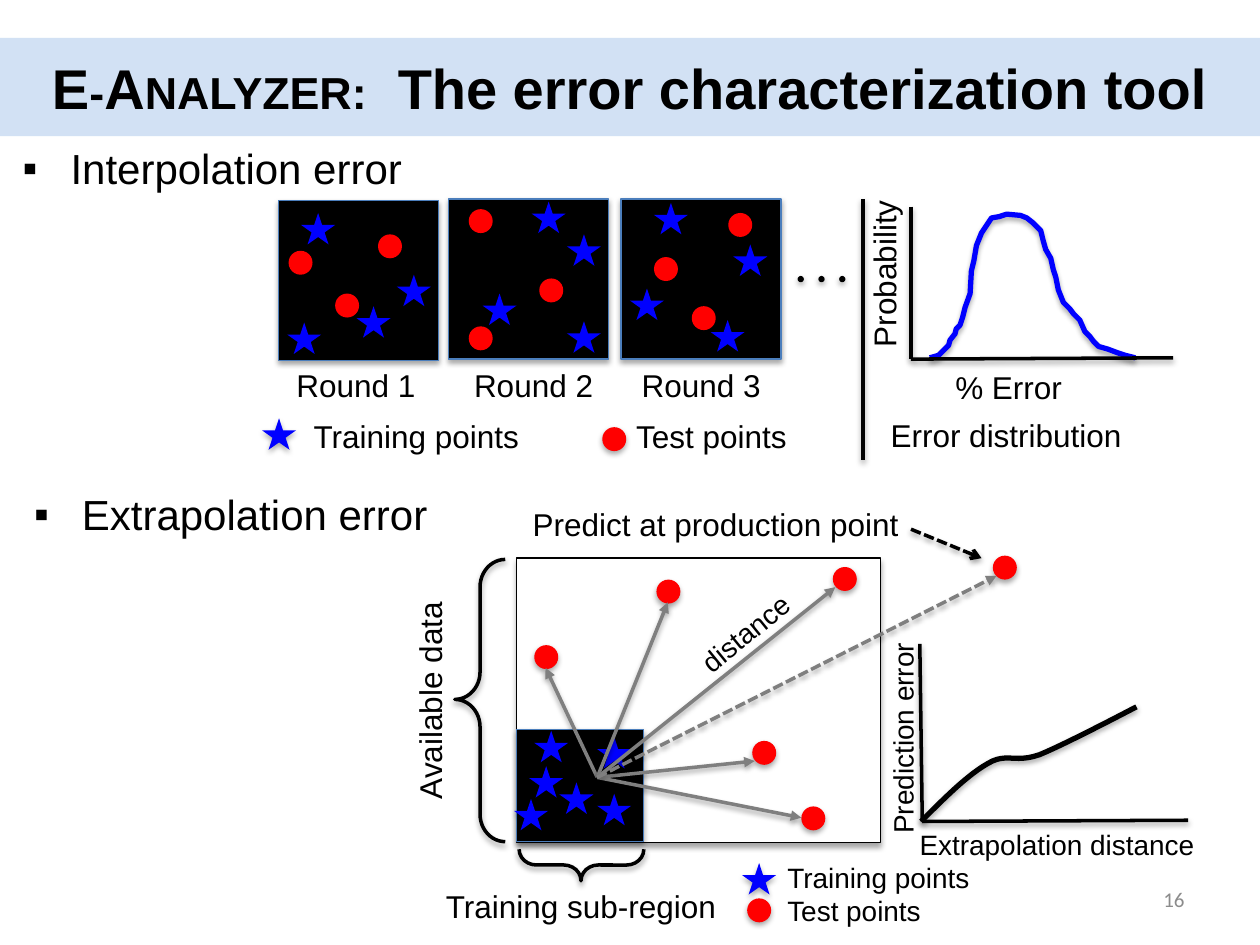
from typing import NamedTuple

from lxml import etree
from pptx import Presentation
from pptx.dml.color import RGBColor
from pptx.enum.dml import MSO_LINE
from pptx.enum.shapes import MSO_CONNECTOR, MSO_SHAPE
from pptx.enum.text import MSO_ANCHOR, MSO_AUTO_SIZE, PP_ALIGN
from pptx.oxml.ns import qn
from pptx.util import Inches, Pt

RECT, OVAL, STAR = MSO_SHAPE.RECTANGLE, MSO_SHAPE.OVAL, MSO_SHAPE.STAR_5_POINT
BRACE, STRAIGHT = MSO_SHAPE.RIGHT_BRACE, MSO_CONNECTOR.STRAIGHT
LEFT, CENTER, RIGHT = PP_ALIGN.LEFT, PP_ALIGN.CENTER, PP_ALIGN.RIGHT
TOP, MIDDLE = MSO_ANCHOR.TOP, MSO_ANCHOR.MIDDLE
DASH = MSO_LINE.SQUARE_DOT
NO_FIT = MSO_AUTO_SIZE.NONE

COLORS = {"band": "C6D9F1", "ink": "000000", "paper": "FFFFFF", "edge": "4B7EBC",
          "train": "0000FF", "test": "FF0000", "ray": "7F7F7F", "number": "8C8C8C"}
STAR_SIZE = (0.27, 0.25)
DOT_SIZE = (0.19, 0.19)


class Round(NamedTuple):
    left: float
    top: float
    label_left: float
    stars: list
    dots: list


class Label(NamedTuple):
    text: str
    left: float
    top: float
    width: float
    height: float = 0.4
    size: int = 18
    align: PP_ALIGN = LEFT
    rotation: float = 0
    font: str = "Arial"
    color: str = "ink"


class Ray(NamedTuple):
    start: tuple
    end: tuple
    color: str = "ink"
    head: str = ""
    dashed: bool = False


ROUNDS = [
    Round(2.21, 1.59, 2.1, [(2.39, 1.69), (3.15, 2.18), (2.83, 2.43), (2.28, 2.56)],
          [(3, 1.86), (2.66, 2.33), (2.29, 1.99)]),
    Round(3.56, 1.58, 3.51, [(4.22, 1.6), (4.5, 1.86), (3.83, 2.33), (4.5, 2.55)],
          [(3.72, 1.66), (3.72, 2.59), (4.28, 2.21)]),
    Round(4.93, 1.58, 4.84, [(5.19, 1.61), (5.82, 1.94), (5, 2.29), (5.64, 2.54)],
          [(5.78, 1.69), (5.19, 2.04), (5.49, 2.43)]),
]
REGION_STARS = [(4.24, 5.8), (4.44, 6.21), (4.74, 5.85), (4.74, 6.3), (4.2, 6.08), (4.08, 6.34)]
FAR_DOTS = [(4.24, 5.12), (6.61, 4.5), (7.88, 4.41), (5.21, 4.6), (5.97, 5.88), (6.36, 6.4)]
LEGEND_STARS = [(2.08, 3.32), (5.89, 6.85)]
LEGEND_DOTS = [(4.78, 3.39), (5.93, 7.13)]

HUB = (4.74, 6.17)
TARGETS = [(4.33, 5.3), (5.3, 4.78), (6.63, 4.66), (5.99, 6.04), (6.36, 6.49)]
RAYS = [Ray(HUB, end, "ray", "triangle") for end in TARGETS] + [
    Ray(HUB, (7.91, 4.57), "ray", "triangle", True),
    Ray((7.23, 4.2), (7.79, 4.43), "ink", "arrow", True),
    Ray((7.23, 2.85), (9.31, 2.84)),
    Ray((7.23, 1.64), (7.23, 2.85)),
    Ray((6.85, 1.58), (6.85, 3.65)),
    Ray((7.32, 6.52), (9.43, 6.51)),
    Ray((7.3, 5.11), (7.32, 6.52)),
]

BELL = [(7.38, 2.84), (7.45, 2.82), (7.49, 2.78), (7.53, 2.74), (7.54, 2.7), (7.58, 2.65),
        (7.59, 2.61), (7.62, 2.58), (7.64, 2.52), (7.66, 2.44), (7.7, 2.33), (7.71, 2.15),
        (7.73, 2.07), (7.75, 1.95), (7.79, 1.85), (7.83, 1.79), (7.87, 1.73), (7.93, 1.72),
        (7.99, 1.7), (8.1, 1.71), (8.15, 1.73), (8.2, 1.77), (8.26, 1.83), (8.28, 1.91),
        (8.3, 1.98), (8.34, 2.05), (8.36, 2.14), (8.38, 2.2), (8.4, 2.3), (8.44, 2.4),
        (8.49, 2.45), (8.52, 2.49), (8.57, 2.54), (8.61, 2.63), (8.65, 2.67), (8.68, 2.71),
        (8.72, 2.75), (8.79, 2.77), (8.87, 2.8), (8.93, 2.82), (9.01, 2.84)]
TREND = [((7.31, 6.52), (7.5, 6.33), (7.68, 6.15), (7.84, 6.06)),
         ((7.84, 6.06), (7.99, 5.97), (8.05, 6.06), (8.25, 5.99)),
         ((8.25, 5.99), (8.45, 5.91), (9.02, 5.61), (9.02, 5.61))]

LABELS = [Label(f"Round {i}", r.label_left, 2.86, 1.45, align=CENTER)
          for i, r in enumerate(ROUNDS, 1)] + [
    Label("Probability", 6.24, 1.88, 1.55, rotation=270),
    Label("% Error", 7.4, 2.87, 1.21, align=CENTER),
    Label("Training points", 2.39, 3.26, 1.89),
    Label("Test points", 4.95, 3.26, 1.89),
    Label("Error distribution", 6.97, 3.25, 2.64),
    Label("Training points\nTest points", 6.15, 6.78, 2.21, 0.64, 16),
    Label("Training sub-region", 3.44, 6.99, 2.37),
    Label("Available data", 2.44, 5.36, 1.94, align=CENTER, rotation=270),
    Label("Predict at production point", 3.37, 3.96, 3.86, align=RIGHT),
    Label("distance", 5.33, 4.84, 1.17, 0.37, 16, CENTER, 320.9),
    Label("Extrapolation distance", 7.2, 6.52, 2.55, 0.37, 16),
    Label("Prediction error", 6.18, 5.7, 1.92, 0.32, 16, CENTER, 270),
    Label("16", 7.17, 6.99, 2.33, 0.32, 12, RIGHT, font="Calibri", color="number"),
]


def rgb(name: str) -> RGBColor:
    return RGBColor.from_string(COLORS[name])


def add_shadow(effects) -> None:
    shadow = etree.SubElement(effects, qn("a:outerShdw"), blurRad="40000", dist="23000",
                              dir="5400000", rotWithShape="0")
    color = etree.SubElement(shadow, qn("a:srgbClr"), val=COLORS["ink"])
    etree.SubElement(color, qn("a:alpha"), val="35000")


def style_shape(sp, fill: str = "", line: str = "", width: float = 0.75) -> None:
    if fill:
        sp.fill.solid()
        sp.fill.fore_color.rgb = rgb(fill)
    else:
        sp.fill.background()
    if line:
        sp.line.color.rgb = rgb(line)
        sp.line.width = Pt(width)
    else:
        sp.line.fill.background()
    sp.shadow.inherit = False
    add_shadow(sp._element.spPr.find(qn("a:effectLst")))


def add_shape(s, kind, left: float, top: float, width: float, height: float, *style):
    sp = s.shapes.add_shape(kind, *map(Inches, (left, top, width, height)))
    style_shape(sp, *style)
    return sp


def add_points(s, stars: list, dots: list) -> None:
    for at in stars:
        add_shape(s, STAR, *at, *STAR_SIZE, "train")
    for at in dots:
        add_shape(s, OVAL, *at, *DOT_SIZE, "test")


def add_brace(s, left: float, top: float, width: float, height: float, rotation: float) -> None:
    sp = add_shape(s, BRACE, left, top, width, height, "", "ink", 2)
    sp.adjustments[0], sp.adjustments[1] = 0.546, 0.504
    sp.rotation = rotation


def add_ray(s, ray: Ray) -> None:
    c = s.shapes.add_connector(STRAIGHT, *map(Inches, ray.start + ray.end))
    c.line.color.rgb = rgb(ray.color)
    c.line.width = Pt(2)
    if ray.dashed:
        c.line.dash_style = DASH
    if ray.head:
        etree.SubElement(c.line._get_or_add_ln(), qn("a:tailEnd"), type=ray.head)
    add_shadow(etree.SubElement(c._element.spPr, qn("a:effectLst")))


def add_curve(s, points: list, color: str) -> None:
    pts = [(Inches(x), Inches(y)) for x, y in points]
    builder = s.shapes.build_freeform(*pts[0])
    builder.add_line_segments(pts[1:], close=False)
    style_shape(builder.convert_to_shape(), "", color, 3)


def bezier(curve: tuple, t: float) -> tuple:
    weights = ((1 - t) ** 3, 3 * t * (1 - t) ** 2, 3 * t * t * (1 - t), t ** 3)
    return tuple(sum(w * p[axis] for w, p in zip(weights, curve)) for axis in (0, 1))


def add_run(p, text: str, size: int, font: str = "Arial", color: str = "ink"):
    r = p.add_run()
    r.text = text
    r.font.name, r.font.size = font, Pt(size)
    r.font.color.rgb = rgb(color)
    return r


def add_label(s, label: Label) -> None:
    box = (label.left, label.top, label.width, label.height)
    sp = s.shapes.add_textbox(*map(Inches, box))
    sp.rotation = label.rotation
    tf = sp.text_frame
    tf.word_wrap = True
    for i, text in enumerate(label.text.split("\n")):
        p = tf.add_paragraph() if i else tf.paragraphs[0]
        p.alignment = label.align
        add_run(p, text, label.size, label.font, label.color)


def place(sp, left: float, top: float, width: float, height: float, anchor):
    sp.left, sp.top, sp.width, sp.height = map(Inches, (left, top, width, height))
    tf = sp.text_frame
    tf.auto_size, tf.vertical_anchor, tf.word_wrap = NO_FIT, anchor, True
    return tf.paragraphs[0]


def fill_title(sp) -> None:
    p = place(sp, 0, 0.3, 10, 0.78, MIDDLE)
    p.alignment = CENTER
    sp.fill.solid()
    sp.fill.fore_color.rgb = rgb("band")
    color = next(sp._element.spPr.iter(qn("a:srgbClr")))
    etree.SubElement(color, qn("a:alpha"), val="78000")
    for text, cap in (("E-Analyzer:", "small"), ("  The error characterization tool", "none")):
        r = add_run(p, text, 32)
        r.font.bold = True
        r._r.get_or_add_rPr().set("cap", cap)


def fill_bullet(sp, text: str, left: float, top: float) -> None:
    p = place(sp, left, top, 9.08, 0.5, TOP)
    p.space_before = Pt(0)
    pPr = p._p.get_or_add_pPr()
    pPr.set("marL", str(Inches(0.38)))
    pPr.set("indent", str(-Inches(0.38)))
    etree.SubElement(pPr, qn("a:buFont"), typeface="Arial")
    etree.SubElement(pPr, qn("a:buChar"), char="▪")
    add_run(p, text, 24)


def main() -> None:
    prs = Presentation()
    prs.slide_width, prs.slide_height = Inches(10), Inches(7.5)
    s = prs.slides.add_slide(prs.slide_layouts[3])
    fill_title(s.shapes.title)
    fill_bullet(s.placeholders[1], "Interpolation error", 0.08, 1.08)
    fill_bullet(s.placeholders[2], "Extrapolation error", 0.17, 3.83)
    for r in ROUNDS:
        add_shape(s, RECT, r.left, r.top, 1.27, 1.27, "ink", "edge")
        add_points(s, r.stars, r.dots)
    for i in range(3):
        add_shape(s, OVAL, 6.33 + 0.165 * i, 2.19, 0.05, 0.05, "ink")
    add_shape(s, RECT, 4.1, 4.43, 2.89, 2.26, "paper", "ink")
    add_shape(s, RECT, 4.1, 5.79, 1.01, 0.89, "ink", "edge")
    add_points(s, REGION_STARS + LEGEND_STARS, FAR_DOTS + LEGEND_DOTS)
    add_brace(s, 4.49, 6.37, 0.25, 0.99, 90)
    add_brace(s, 3.61, 4.44, 0.4, 2.24, 180)
    add_curve(s, BELL, "train")
    add_curve(s, [bezier(c, i / 12) for c in TREND for i in range(13)], "ink")
    for ray in RAYS:
        add_ray(s, ray)
    for label in LABELS:
        add_label(s, label)
    prs.save("out.pptx")


if __name__ == "__main__":
    main()
